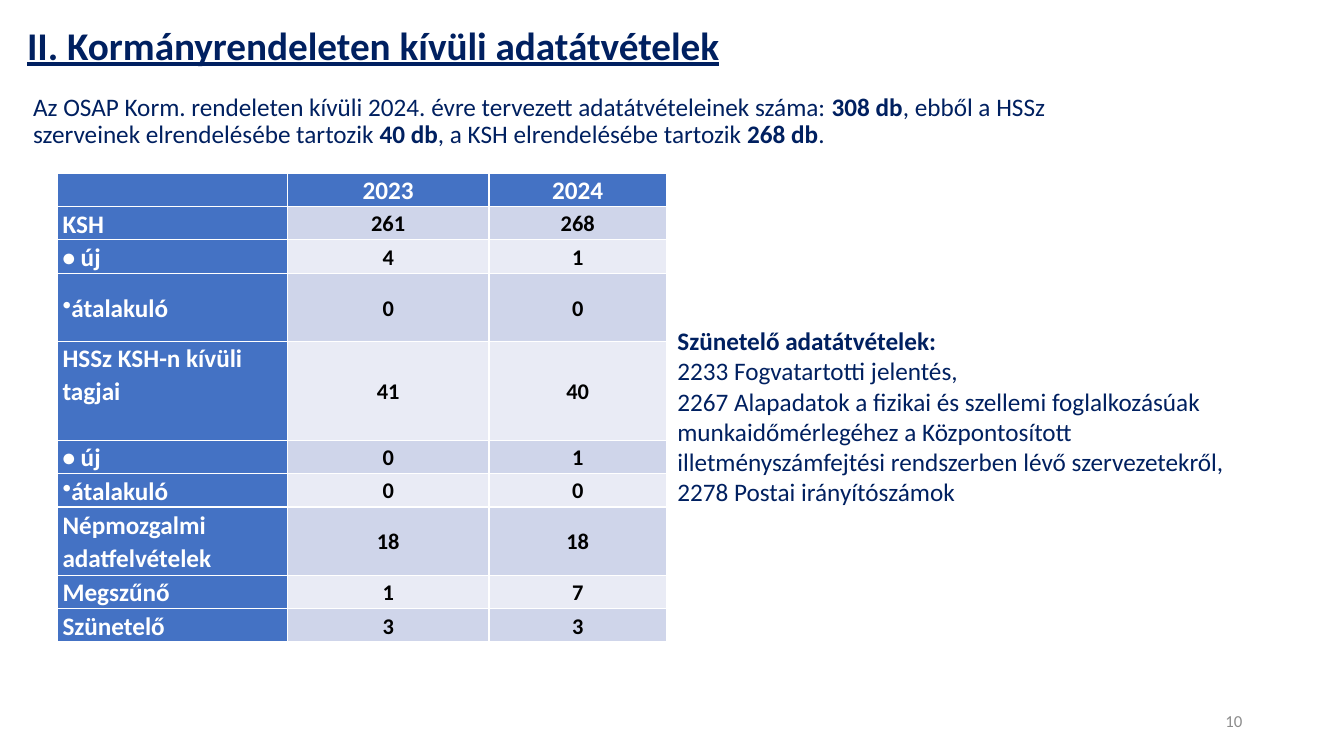
from lxml import etree
from pptx import Presentation
from pptx import util as u
from pptx.dml import color
from pptx.enum import text
from pptx.oxml import ns

NAVY, BLUE, WHITE, BLACK, GREY = "002060", "4472C4", "FFFFFF", "000000", "8C8C8C"
BANDS = ("CFD5EA", "E9EBF5")
LEFT, CENTER, RIGHT = text.PP_ALIGN.LEFT, text.PP_ALIGN.CENTER, text.PP_ALIGN.RIGHT
TOP, MIDDLE, BOTTOM = text.MSO_ANCHOR.TOP, text.MSO_ANCHOR.MIDDLE, text.MSO_ANCHOR.BOTTOM

COLUMN_WIDTHS = (2.28, 2, 1.76)
LINE_HEIGHT, TWO_LINES, THREE_LINES = 0.33, 0.68, 0.98
TRANSFERS = [
    ("", "2023", "2024", LINE_HEIGHT, BOTTOM),
    ("KSH", "261", "268", LINE_HEIGHT, BOTTOM),
    ("• új", "4", "1", LINE_HEIGHT, MIDDLE),
    ("átalakuló", "0", "0", TWO_LINES, MIDDLE),
    ("HSSz KSH-n kívüli tagjai", "41", "40", THREE_LINES, TOP),
    ("• új", "0", "1", LINE_HEIGHT, MIDDLE),
    ("átalakuló", "0", "0", LINE_HEIGHT, MIDDLE),
    ("Népmozgalmi adatfelvételek", "18", "18", TWO_LINES, MIDDLE),
    ("Megszűnő", "1", "7", LINE_HEIGHT, MIDDLE),
    ("Szünetelő", "3", "3", LINE_HEIGHT, BOTTOM),
]
INTRO = [
    ("Az OSAP Korm. rendeleten kívüli 2024. évre tervezett adatátvételeinek száma: ", False),
    ("308 db", True),
    (", ebből a HSSz szerveinek elrendelésébe tartozik ", False),
    ("40 db", True),
    (", a KSH elrendelésébe tartozik ", False),
    ("268 db", True),
    (".", False),
]
PAUSED = [
    [("Szünetelő adatátvételek:", True)],
    [("2233 Fogvatartotti jelentés,", False)],
    [("2267 Alapadatok a fizikai és szellemi foglalkozásúak munkaidőmérlegéhez a "
      "Központosított illetményszámfejtési rendszerben lévő szervezetekről,", False)],
    [("2278 Postai irányítószámok", False)],
]


def rgb(value):
    """Return the colour for a hex string."""
    return color.RGBColor.from_string(value)


def style_paragraph(paragraph, size, hue, align=LEFT, spacing=1.0):
    """Set the font, alignment and line spacing of a paragraph."""
    paragraph.alignment = align
    paragraph.line_spacing = spacing
    font = paragraph.font
    font.name, font.size = "Calibri", u.Pt(size)
    font.color.rgb = rgb(hue)


def add_text(slide, box, paragraphs, size, hue, align=LEFT, anchor=TOP, spacing=1.0):
    """Add a text box of (wording, bold) runs and return its frame."""
    frame = slide.shapes.add_textbox(*map(u.Inches, box)).text_frame
    frame.word_wrap, frame.vertical_anchor = True, anchor
    for index, runs in enumerate(paragraphs):
        paragraph = frame.add_paragraph() if index else frame.paragraphs[0]
        style_paragraph(paragraph, size, hue, align, spacing)
        for wording, bold in runs:
            run = paragraph.add_run()
            run.text, run.font.bold = wording, bold
    return frame


def add_bullet(paragraph):
    """Give a paragraph a hanging round bullet."""
    properties = paragraph._p.get_or_add_pPr()
    properties.set("marL", "0")
    properties.set("indent", str(-u.Inches(0.31)))
    etree.SubElement(properties, ns.qn("a:buChar")).set("char", "•")


def fill_cell(cell, wording, fill, size, hue, align, anchor):
    """Write one table cell in bold on a solid fill."""
    cell.fill.solid()
    cell.fill.fore_color.rgb = rgb(fill)
    cell.margin_left = cell.margin_right = u.Inches(0.05)
    cell.margin_top = cell.margin_bottom = 0
    cell.vertical_anchor = anchor
    paragraph = cell.text_frame.paragraphs[0]
    paragraph.text = wording
    if wording == "átalakuló":
        add_bullet(paragraph)
    style_paragraph(paragraph, size, hue, align, 1.07)
    paragraph.font.bold = True


def add_transfer_table(slide, left, top):
    """Add the table of data transfers by year."""
    heights = [row[3] for row in TRANSFERS]
    box = (left, top, sum(COLUMN_WIDTHS), sum(heights))
    table = slide.shapes.add_table(
        len(TRANSFERS), len(COLUMN_WIDTHS), *map(u.Inches, box)).table
    table.first_col = True
    for column, width in zip(table.columns, COLUMN_WIDTHS):
        column.width = u.Inches(width)
    for r, (*wordings, height, anchor) in enumerate(TRANSFERS):
        table.rows[r].height = u.Inches(height)
        for c, wording in enumerate(wordings):
            cell, align = table.cell(r, c), CENTER if c else LEFT
            if r and c:
                fill_cell(cell, wording, BANDS[(r - 1) % 2], 16, BLACK, align, MIDDLE)
            else:
                fill_cell(cell, wording, BLUE, 18, WHITE, align, anchor)


def add_heading(slide, box):
    """Add the underlined slide title."""
    title = [[("II. Kormányrendeleten kívüli adatátvételek", True)]]
    frame = add_text(slide, box, title, 28, NAVY, anchor=MIDDLE, spacing=0.9)
    frame.paragraphs[0].runs[0].font.underline = True


def add_paused_list(slide, box):
    """Add the list of paused data transfers beside the table."""
    frame = add_text(slide, box, PAUSED, 18, NAVY)
    frame.margin_top = u.Inches(0.35)


def main():
    """Build and save the slide."""
    presentation = Presentation()
    presentation.slide_width, presentation.slide_height = u.Inches(13.33), u.Inches(7.5)
    slide = presentation.slides.add_slide(presentation.slide_layouts[6])
    add_heading(slide, (0.17, 0.16, 8.33, 0.62))
    add_text(slide, (0.23, 0.89, 10.77, 0.67), [INTRO], 18, NAVY, spacing=0.9)
    add_transfer_table(slide, 0.57, 1.72)
    add_paused_list(slide, (6.62, 2.88, 6.06, 2.83))
    add_text(slide, (9.42, 6.95, 3, 0.4), [[("10", False)]], 12, GREY, RIGHT, MIDDLE)
    presentation.save("out.pptx")


if __name__ == "__main__":
    main()
